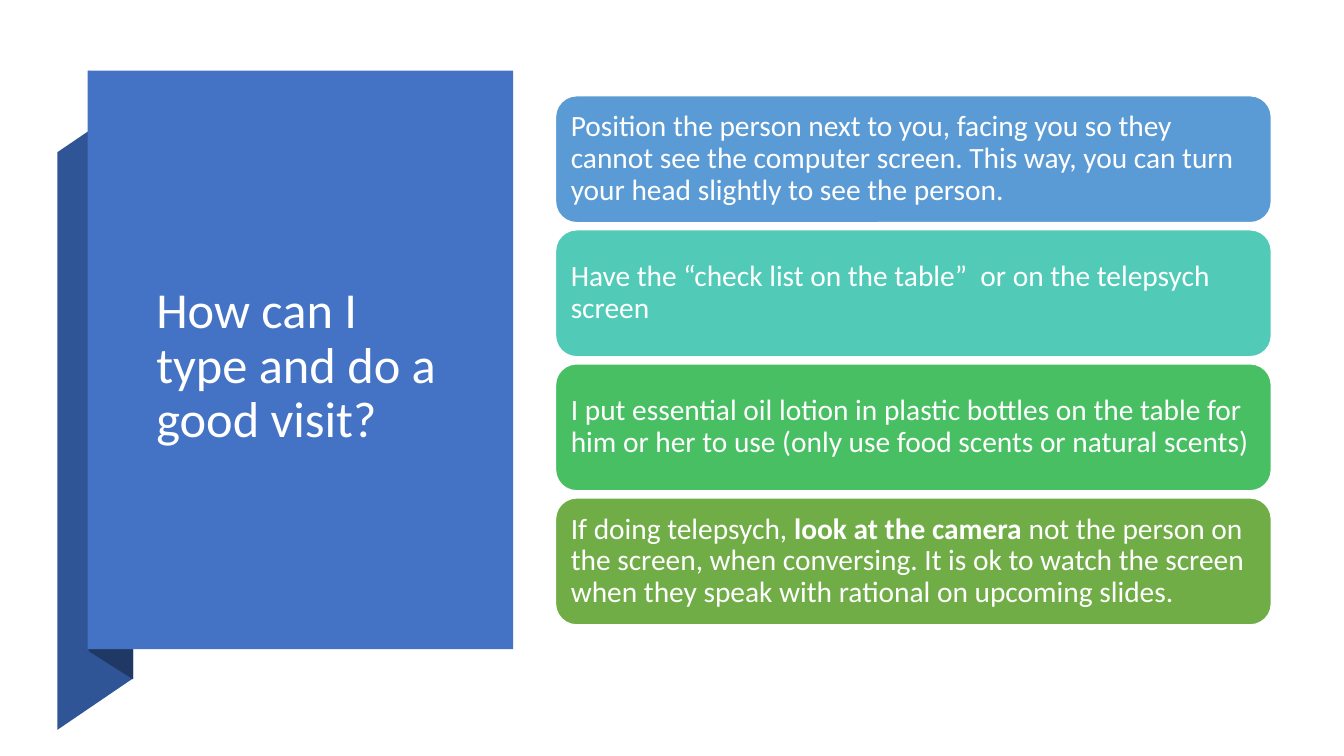
from pptx import Presentation
from pptx import util as u
from pptx.dml import color
from pptx.enum import shapes, text


def paint(code):
    return color.RGBColor.from_string(code)


def apply(target, values):
    for name, value in values.items():
        setattr(target, name, value)


class Deck:
    frame = {
        "word_wrap": True,
        "auto_size": text.MSO_AUTO_SIZE.NONE,
        "vertical_anchor": text.MSO_ANCHOR.MIDDLE,
    }
    para = {"alignment": text.PP_ALIGN.LEFT, "line_spacing": 0.9}
    font = {"name": "Calibri"}
    ink = "FFFFFF"

    def __init__(self, wide, high):
        self.show = Presentation()
        apply(self.show, {"slide_width": u.Inches(wide), "slide_height": u.Inches(high)})
        self.slide = self.show.slides.add_slide(self.show.slide_layouts[5])

    def style(self, shape, fill, edge=None):
        shape.shadow.inherit = False
        shape.fill.solid()
        shape.fill.fore_color.rgb = paint(fill)
        if edge:
            shape.line.color.rgb = paint(edge)
            shape.line.width = u.Pt(1)
        else:
            shape.line.fill.background()
        return shape

    def label(self, shape, parts, size, inset):
        frame = shape.text_frame
        apply(frame, self.frame)
        sides = ("left", "top", "right", "bottom")
        apply(frame, {f"margin_{side}": u.Inches(inset) for side in sides})
        line = frame.paragraphs[0]
        apply(line, self.para)
        for words, bold in parts:
            run = line.add_run()
            run.text = words
            apply(run.font, {**self.font, "size": u.Pt(size), "bold": bold})
            run.font.color.rgb = paint(self.ink)

    def fold(self, points, fill):
        spots = [(u.Inches(x), u.Inches(y)) for x, y in points]
        pen = self.slide.shapes.build_freeform(*spots[0])
        pen.add_line_segments(spots[1:], close=True)
        self.style(pen.convert_to_shape(), fill)

    def box(self, kind, place, fill, edge=None):
        shape = self.slide.shapes.add_shape(kind, *map(u.Inches, place))
        return self.style(shape, fill, edge)

    def title(self, words, place, size):
        shape = self.slide.shapes.title
        shape.element.getparent().append(shape.element)
        apply(shape, dict(zip(("left", "top", "width", "height"), map(u.Inches, place))))
        self.label(shape, [(words, False)], size, 0.1)

    def card(self, place, fill, parts):
        shape = self.box(shapes.MSO_SHAPE.ROUNDED_RECTANGLE, place, fill, self.ink)
        self.label(shape, parts, 21, 0.09)


TIPS = [
    ("5B9BD5", [("Position the person next to you, facing you so they cannot see the "
                 "computer screen. This way, you can turn your head slightly to see "
                 "the person.", False)]),
    ("52CAB8", [("Have the “check list on the table”  or on the telepsych screen", False)]),
    ("49BF64", [("I put essential oil lotion in plastic bottles on the table for him or "
                 "her to use (only use food scents or natural scents)", False)]),
    ("70AD47", [("If doing telepsych, ", False),
                ("look at the camera ", True),
                ("not the person on the screen, when conversing. It is ok to watch the "
                 "screen when they speak with rational on upcoming slides.", False)]),
]


def main():
    deck = Deck(13.33, 7.5)
    deck.fold([(0.57, 7.24), (1.32, 6.73), (1.32, 1), (0.57, 1.51)], "2F5597")
    deck.fold([(0.88, 6.46), (1.32, 6.74), (1.32, 0.99), (0.88, 0.7)], "203864")
    deck.box(shapes.MSO_SHAPE.RECTANGLE, (0.87, 0.7, 4.22, 5.74), "4472C4")
    deck.title("How can I type and do a good visit?", (1.45, 1.67, 3.01, 3.94), 36)
    for row, (fill, parts) in enumerate(TIPS):
        deck.card((5.51, 0.95 + 1.33 * row, 7.1, 1.26), fill, parts)
    deck.show.save("out.pptx")


if __name__ == "__main__":
    main()
